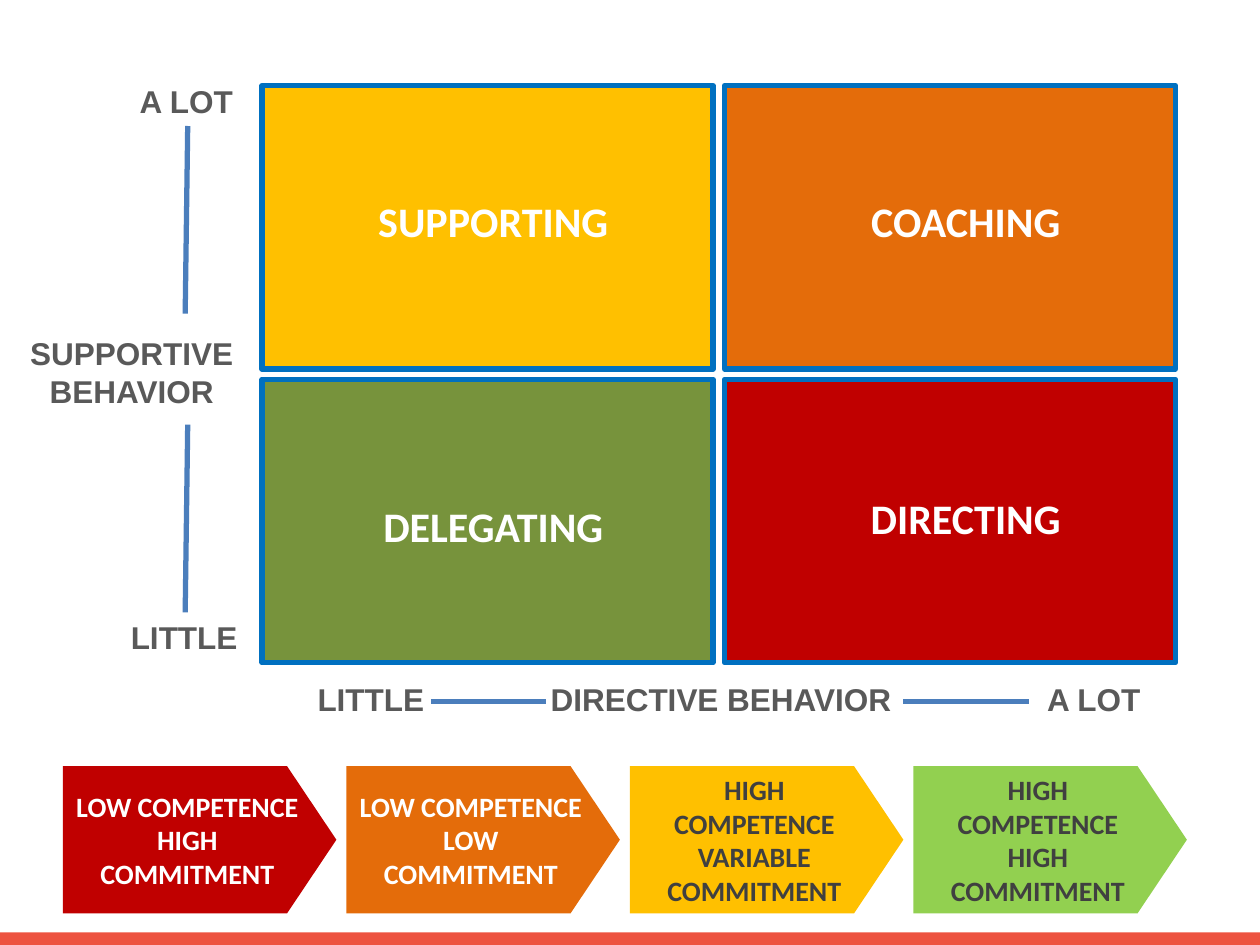
from lxml.etree import SubElement
from pptx import Presentation
from pptx.dml.color import RGBColor
from pptx.enum.shapes import MSO_CONNECTOR, MSO_SHAPE
from pptx.enum.text import MSO_ANCHOR, PP_ALIGN
from pptx.oxml.ns import qn
from pptx.util import Inches, Pt

WHITE, GRAY, DARK = "FFFFFF", "595959", "404040"
RED, ORANGE, YELLOW = "C00000", "E46C0A", "FFC000"
OLIVE, LIME = "77933C", "92D050"
BORDER, AXIS, STRIP = "0070C0", "4B7EBC", "ED5340"


def rgb(value):
    return RGBColor.from_string(value)


def write(tf, text, size, font, color, align=PP_ALIGN.CENTER):
    tf.text = text
    for p in tf.paragraphs:
        p.alignment = align
        for r in p.runs:
            r.font.size = Pt(size)
            r.font.name = font
            r.font.bold = True
            r.font.color.rgb = rgb(color)


def add_block(s, kind, x, y, w, h, fill, line=None):
    sp = s.shapes.add_shape(kind, Inches(x), Inches(y), Inches(w), Inches(h))
    sp.shadow.inherit = False
    sp.fill.solid()
    sp.fill.fore_color.rgb = rgb(fill)
    if line:
        sp.line.color.rgb = rgb(line)
        sp.line.width = Pt(3)
    else:
        sp.line.fill.background()
    return sp


def add_label(s, text, x, y, w, h, size=18, font="Arial", color=GRAY,
              align=PP_ALIGN.CENTER, wrap=True):
    sp = s.shapes.add_textbox(Inches(x), Inches(y), Inches(w), Inches(h))
    tf = sp.text_frame
    tf.word_wrap = wrap
    write(tf, text, size, font, color, align)
    return tf


def add_axis_line(s, x1, y1, x2, y2):
    line = s.shapes.add_connector(MSO_CONNECTOR.STRAIGHT, Inches(x1), Inches(y1),
                                  Inches(x2), Inches(y2))
    line.line.color.rgb = rgb(AXIS)
    line.line.width = Pt(3)
    SubElement(line._element.spPr, qn("a:effectLst"))


def add_quadrant(s, col, row, name, fill, label_y):
    add_block(s, MSO_SHAPE.RECTANGLE, 2.08 + 3.67 * col, 0.68 + 2.33 * row,
              3.58, 2.25, fill, BORDER)
    add_label(s, name, 2.83 + 3.75 * col, label_y, 2.17, 0.5, 24, "Calibri", WHITE)


def add_stage(s, index, text, fill, color):
    sp = add_block(s, MSO_SHAPE.PENTAGON, 0.5 + 2.25 * index, 6.08, 2.17, 1.17, fill)
    sp.adjustments[0] = 0.335
    sp.text_frame.vertical_anchor = MSO_ANCHOR.MIDDLE
    write(sp.text_frame, text, 16, "Calibri", color)


def add_supportive_axis(s):
    add_label(s, "SUPPORTIVE\nBEHAVIOR", -0.58, 2.6, 3.25, 0.71)
    add_label(s, "LITTLE", 0.94, 4.86, 1.06, 0.4, align=PP_ALIGN.LEFT, wrap=False)
    add_label(s, "A LOT", 1.01, 0.6, 0.95, 0.4, align=PP_ALIGN.LEFT, wrap=False)
    for bottom in (4.86, 2.49):
        add_axis_line(s, 1.47, bottom, 1.49, bottom - 1.49)


def add_directive_axis(s):
    tf = add_label(s, "LITTLE\tDIRECTIVE BEHAVIOR\tA LOT", 2.08, 5.35, 7.42, 0.4,
                   align=PP_ALIGN.LEFT)
    tf.margin_left = Inches(0.44)
    tabs = SubElement(tf.paragraphs[0]._p.get_or_add_pPr(), qn("a:tabLst"))
    for pos in (1.85, 5.79):
        SubElement(tabs, qn("a:tab"), pos=str(Inches(pos)), algn="l")
    for start, end in ((3.42, 4.33), (7.17, 8.17)):
        add_axis_line(s, start, 5.57, end, 5.57)


def main():
    prs = Presentation()
    prs.slide_width, prs.slide_height = Inches(10), Inches(7.5)
    s = prs.slides.add_slide(prs.slide_layouts[6])
    add_block(s, MSO_SHAPE.RECTANGLE, 0, 7.4, 10, 0.1, STRIP)

    quadrants = [
        (0, 0, "SUPPORTING", YELLOW, 1.5),
        (1, 0, "COACHING", ORANGE, 1.5),
        (1, 1, "DIRECTING", RED, 3.86),
        (0, 1, "DELEGATING", OLIVE, 3.92),
    ]
    for quadrant in quadrants:
        add_quadrant(s, *quadrant)

    add_supportive_axis(s)
    add_directive_axis(s)

    stages = [
        ("LOW COMPETENCE\nHIGH COMMITMENT", RED, WHITE),
        ("LOW COMPETENCE\nLOW COMMITMENT", ORANGE, WHITE),
        ("HIGH COMPETENCE\nVARIABLE COMMITMENT", YELLOW, DARK),
        ("HIGH COMPETENCE\nHIGH\nCOMMITMENT", LIME, DARK),
    ]
    for index, stage in enumerate(stages):
        add_stage(s, index, *stage)

    prs.save("out.pptx")


if __name__ == "__main__":
    main()
